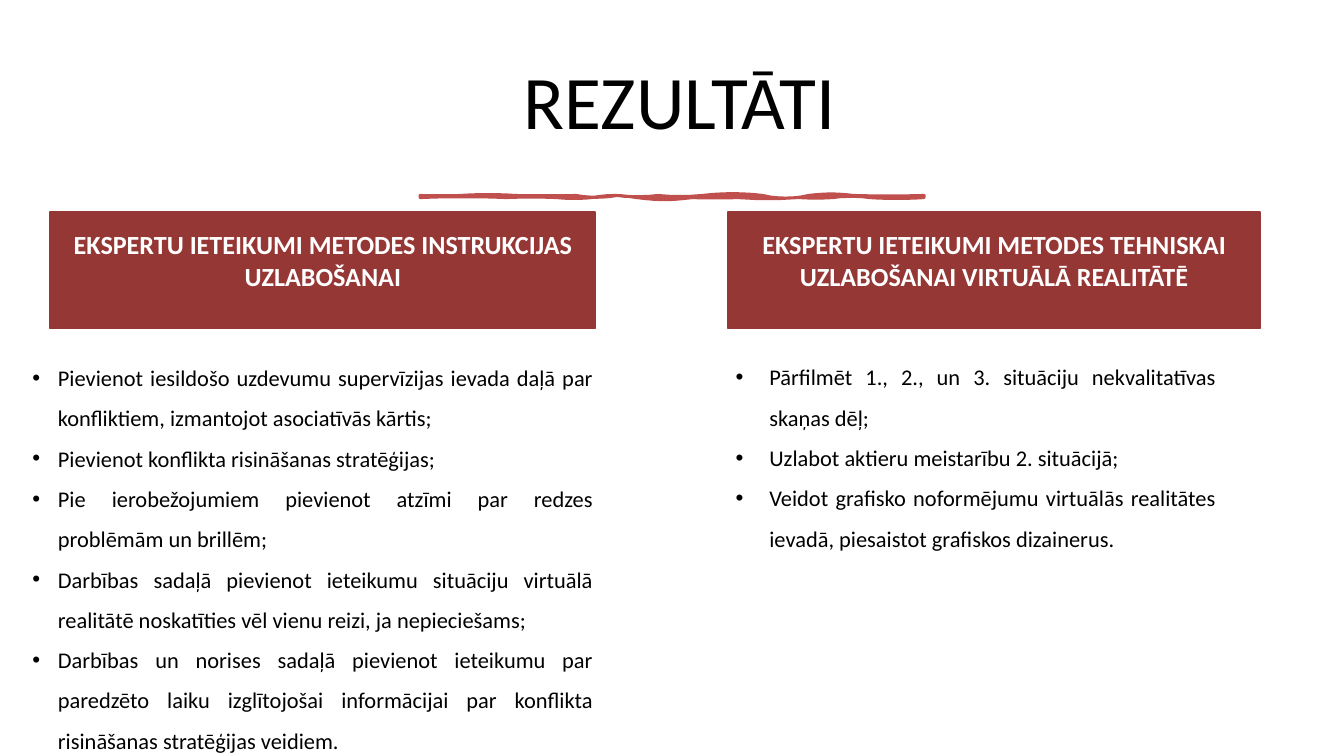
from dataclasses import dataclass
from itertools import pairwise

from lxml.etree import SubElement
from pptx import Presentation
from pptx.dml.color import RGBColor
from pptx.enum.shapes import MSO_SHAPE
from pptx.enum.text import MSO_ANCHOR, MSO_AUTO_SIZE, PP_ALIGN
from pptx.oxml.ns import qn
from pptx.util import Cm, Pt


@dataclass(frozen=True)
class Theme:
    font: str = "Calibri"
    title_size: Pt = Pt(81)
    header_size: Pt = Pt(28)
    body_size: Pt = Pt(24)
    ink: RGBColor = RGBColor(0, 0, 0)
    paper: RGBColor = RGBColor(255, 255, 255)
    band: RGBColor = RGBColor(0x95, 0x37, 0x35)
    stroke: RGBColor = RGBColor(0xC0, 0x50, 0x4D)


@dataclass(frozen=True)
class Box:
    """A rectangle in centimetres."""
    left: float
    top: float
    width: float
    height: float

    def emu(self):
        return Cm(self.left), Cm(self.top), Cm(self.width), Cm(self.height)


THEME = Theme()

INSTRUCTION_ADVICE = [
    "Pievienot iesildošo uzdevumu supervīzijas ievada daļā par konfliktiem, "
    "izmantojot asociatīvās kārtis;",
    "Pievienot konflikta risināšanas stratēģijas;",
    "Pie ierobežojumiem pievienot atzīmi par redzes problēmām un brillēm;",
    "Darbības sadaļā pievienot ieteikumu situāciju virtuālā realitātē "
    "noskatīties vēl vienu reizi, ja nepieciešams;",
    "Darbības un norises sadaļā pievienot ieteikumu par paredzēto laiku "
    "izglītojošai informācijai par konflikta risināšanas stratēģijas veidiem.",
]
TECHNICAL_ADVICE = [
    "Pārfilmēt 1., 2., un 3. situāciju nekvalitatīvas skaņas dēļ;",
    "Uzlabot aktieru meistarību 2. situācijā;",
    "Veidot grafisko noformējumu virtuālās realitātes ievadā, piesaistot "
    "grafiskos dizainerus.",
]


def style(para, size, colour, align, bold=False):
    para.alignment = align
    para.font.name = THEME.font
    para.font.size = size
    para.font.bold = bold
    para.font.color.rgb = colour


def add_title(page, box, text):
    title = page.shapes.title
    title.left, title.top, title.width, title.height = box.emu()
    frame = title.text_frame
    frame.text = text
    frame.vertical_anchor = MSO_ANCHOR.MIDDLE
    para = frame.paragraphs[0]
    style(para, THEME.title_size, THEME.ink, PP_ALIGN.CENTER)
    para.line_spacing = 0.9
    para.space_after = Pt(6)


def wave(knots, bends, base, steps=6):
    """Points of an edge that bows by one bend between each pair of knots."""
    points = []
    for (start, end), bend in zip(pairwise(knots), bends):
        for step in range(steps):
            t = step / steps
            points.append((start + (end - start) * t, base + bend * 4 * t * (1 - t)))
    return points + [(knots[-1], base)]


def add_brush_stroke(page, box):
    # Knots and bends are in hundredths of a centimetre.
    upper = wave([0, 152, 361, 589, 744, 897, 1067, 1295, 1468, 1638, 1905],
                 [1, -3, 1, 7, 5, 4, -7, 10, -6, 2], 0)
    lower = wave([1905, 1697, 1562, 1430, 1199, 1029, 818, 648, 516, 325, 0],
                 [3, -5, 2, 4, 1, 8, -8, 3, -2, -3], box.height * 100)
    builder = page.shapes.build_freeform(*upper[0], scale=Cm(0.01))
    builder.add_line_segments(upper[1:] + lower, close=True)
    stroke = builder.convert_to_shape(Cm(box.left), Cm(box.top))
    stroke.shadow.inherit = False
    stroke.fill.solid()
    stroke.fill.fore_color.rgb = THEME.stroke
    stroke.line.color.rgb = THEME.stroke
    stroke.line.width = Pt(3.25)


def add_header(page, box, text):
    band = page.shapes.add_shape(MSO_SHAPE.RECTANGLE, *box.emu())
    band.shadow.inherit = False
    band.fill.solid()
    band.fill.fore_color.rgb = THEME.band
    band.line.color.rgb = THEME.band
    band.line.width = Pt(2)
    frame = band.text_frame
    frame.word_wrap = True
    frame.vertical_anchor = MSO_ANCHOR.MIDDLE
    frame.margin_bottom = Cm(0.9)
    frame.text = text
    style(frame.paragraphs[0], THEME.header_size, THEME.paper, PP_ALIGN.CENTER, bold=True)


def add_bullets(page, box, items, indent, space_before=Pt(0)):
    frame = page.shapes.add_textbox(*box.emu()).text_frame
    frame.word_wrap = True
    frame.auto_size = MSO_AUTO_SIZE.SHAPE_TO_FIT_TEXT
    frame.text = "\n".join(items)
    for para in frame.paragraphs:
        style(para, THEME.body_size, THEME.ink, PP_ALIGN.JUSTIFY)
        para.line_spacing = 1.5
        properties = para._p.get_or_add_pPr()
        properties.set("marL", str(Cm(indent)))
        properties.set("indent", str(-Cm(indent)))
        bullet_font = SubElement(properties, qn("a:buFont"))
        bullet_font.set("typeface", "Arial")
        SubElement(properties, qn("a:buChar")).set("char", "•")
        # The bullet has to come before the default run properties.
        properties.append(properties.find(qn("a:defRPr")))
    frame.paragraphs[0].space_before = space_before


def add_results_page(deck):
    page = deck.slides.add_slide(deck.slide_layouts[5])
    add_title(page, Box(2.97, 1.75, 45.44, 4.45), "REZULTĀTI")
    add_brush_stroke(page, Box(15.88, 7.39, 19.05, 0.08))
    add_bullets(page, Box(0.97, 13.13, 21.69, 15.49), INSTRUCTION_ADVICE, 0.97, Pt(6))
    add_bullets(page, Box(27.56, 13.11, 18.64, 7.8), TECHNICAL_ADVICE, 1.27)
    add_header(page, Box(1.9, 8.03, 20.6, 4.39),
               "EKSPERTU IETEIKUMI METODES INSTRUKCIJAS UZLABOŠANAI")
    add_header(page, Box(27.51, 8.03, 20.12, 4.39),
               "EKSPERTU IETEIKUMI METODES TEHNISKAI UZLABOŠANAI VIRTUĀLĀ REALITĀTĒ")


def main():
    deck = Presentation()
    deck.slide_width, deck.slide_height = Cm(50.8), Cm(28.58)
    add_results_page(deck)
    deck.save("out.pptx")


if __name__ == "__main__":
    main()
